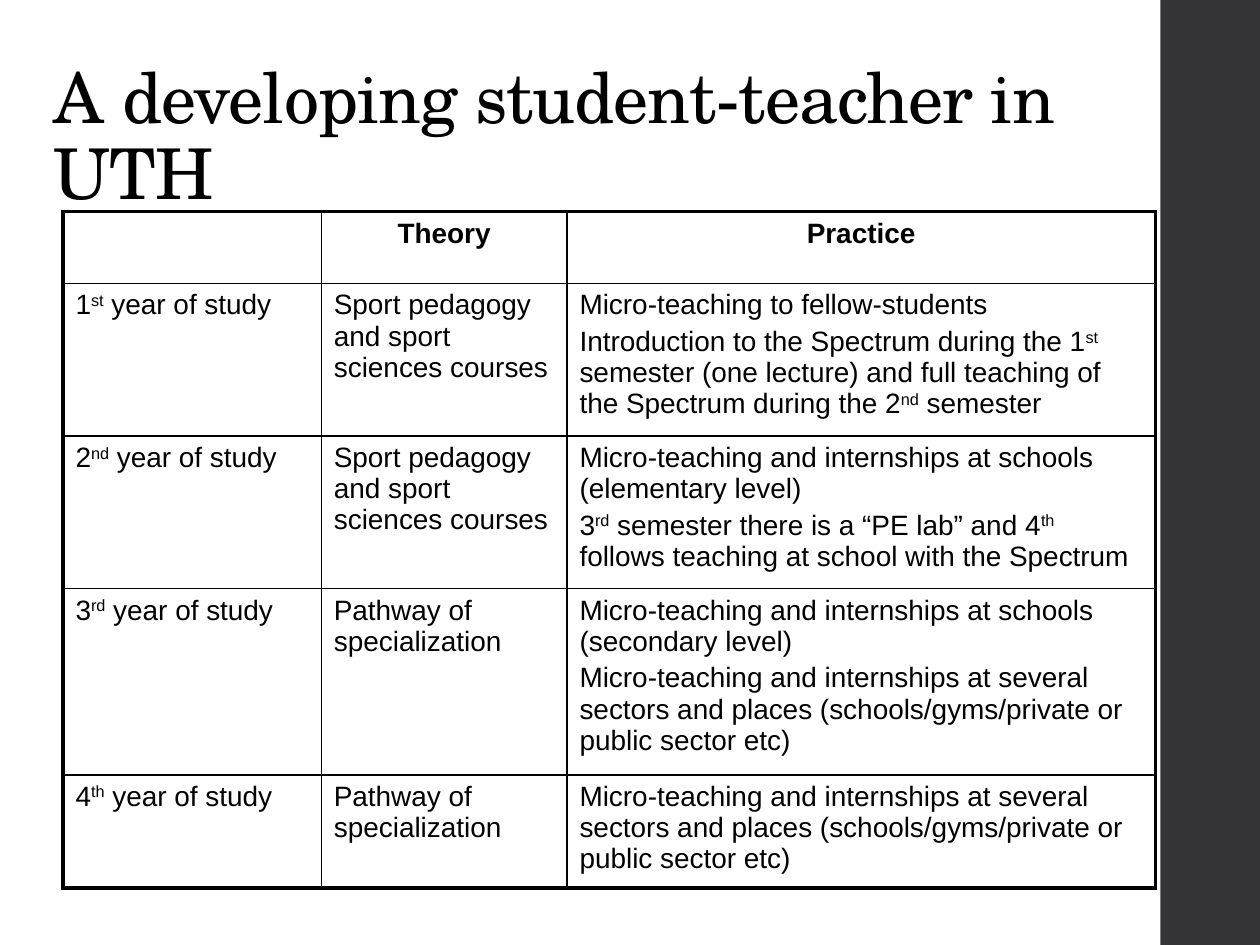
import pptx
import pptx.util
import pptx.dml.color
import pptx.enum.shapes
import pptx.enum.text
import pptx.oxml
import pptx.oxml.ns
from lxml import etree

Inches, Pt = pptx.util.Inches, pptx.util.Pt
BLACK = pptx.dml.color.RGBColor(0x00, 0x00, 0x00)
SIDEBAR_GREY = pptx.dml.color.RGBColor(0x35, 0x35, 0x37)

# Content: ^ encloses superscripts, each cell is a list of paragraphs
TITLE = "A developing student-teacher in UTH"
COURSES = ["Sport pedagogy and sport sciences courses"]
PATHWAY = ["Pathway of specialization"]
SECTORS = ("Micro-teaching and internships at several sectors and places "
           "(schools/gyms/private or public sector etc)")
ROWS = [
    ([""], ["Theory"], ["Practice"]),
    (["1^st^ year of study"], COURSES,
     ["Micro-teaching to fellow-students",
      "Introduction to the Spectrum during the 1^st^ semester (one lecture) "
      "and full teaching of the Spectrum during the 2^nd^ semester"]),
    (["2^nd^ year of study"], COURSES,
     ["Micro-teaching and internships at schools (elementary level)",
      "3^rd^ semester there is a “PE lab” and 4^th^ follows teaching at "
      "school with the Spectrum"]),
    (["3^rd^ year of study"], PATHWAY,
     ["Micro-teaching and internships at schools (secondary level)", SECTORS]),
    (["4^th^ year of study"], PATHWAY, [SECTORS]),
]
COLUMN_WIDTHS = [2.05, 1.95, 4.67]
ROW_HEIGHTS = [0.57, 1.13, 1.13, 1.38, 0.85]
THIN, THICK = 1, 2.25


def add_marked_text(paragraph, text):
    for index, part in enumerate(text.split("^")):
        if part:
            run = paragraph.add_run()
            run.text = part
            if index % 2:
                run.font._element.set("baseline", "30000")


def set_space_before(paragraph, percent):
    properties = paragraph._p.get_or_add_pPr()
    spacing = etree.Element(pptx.oxml.ns.qn("a:spcBef"))
    etree.SubElement(spacing, pptx.oxml.ns.qn("a:spcPct"), val=str(percent * 1000))
    properties.insert(0, spacing)


def set_borders(cell, widths):
    properties = cell._tc.get_or_add_tcPr()
    for position, (side, width) in enumerate(widths.items()):
        properties.insert(position, pptx.oxml.parse_xml(
            f'<a:ln{side} {pptx.oxml.ns.nsdecls("a")} w="{int(Pt(width))}">'
            f'<a:solidFill><a:srgbClr val="{BLACK}"/></a:solidFill></a:ln{side}>'))


presentation = pptx.Presentation()
presentation.slide_width, presentation.slide_height = Inches(10), Inches(7.5)
slide = presentation.slides.add_slide(presentation.slide_layouts[6])

# Sidebar
sidebar = slide.shapes.add_shape(pptx.enum.shapes.MSO_SHAPE.RECTANGLE,
                                 Inches(9.21), 0, Inches(0.79), Inches(7.5))
sidebar.shadow.inherit = False
sidebar.fill.solid()
sidebar.fill.fore_color.rgb = SIDEBAR_GREY
sidebar.line.fill.background()

# Title
title = slide.shapes.add_textbox(Inches(0.33), Inches(0.25), Inches(9.33), Inches(1.5))
title.text_frame.word_wrap = True
title.text_frame.vertical_anchor = pptx.enum.text.MSO_ANCHOR.BOTTOM
heading = title.text_frame.paragraphs[0]
heading.line_spacing = 0.9
heading.font.name, heading.font.size = "TeX Gyre Schola", Pt(40)
heading.font.color.rgb = BLACK
heading_run = heading.add_run()
heading_run.text = TITLE
heading_run.font._element.set("spc", "-50")

# Table of study years
study_table = slide.shapes.add_table(
    len(ROWS), len(COLUMN_WIDTHS), Inches(0.5), Inches(1.68),
    Inches(sum(COLUMN_WIDTHS)), Inches(sum(ROW_HEIGHTS))).table
study_table.first_row = study_table.horz_banding = False
for column, width in zip(study_table.columns, COLUMN_WIDTHS):
    column.width = Inches(width)
for row, height in zip(study_table.rows, ROW_HEIGHTS):
    row.height = Inches(height)

last_row, last_column = len(ROWS) - 1, len(COLUMN_WIDTHS) - 1
for r, row_cells in enumerate(ROWS):
    for c, lines in enumerate(row_cells):
        cell = study_table.cell(r, c)
        cell.fill.background()
        set_borders(cell, {"L": THICK if c == 0 else THIN,
                           "R": THICK if c == last_column else THIN,
                           "T": THICK if r == 0 else THIN,
                           "B": THICK if r == last_row else THIN})
        for n, line in enumerate(lines):
            paragraph = (cell.text_frame.add_paragraph() if n
                         else cell.text_frame.paragraphs[0])
            paragraph.font.name, paragraph.font.size = "Arial", Pt(16)
            paragraph.font.color.rgb = BLACK
            paragraph.font.bold = r == 0
            if r == 0:
                paragraph.alignment = pptx.enum.text.PP_ALIGN.CENTER
            set_space_before(paragraph, 20)
            add_marked_text(paragraph, line)

presentation.save("out.pptx")
